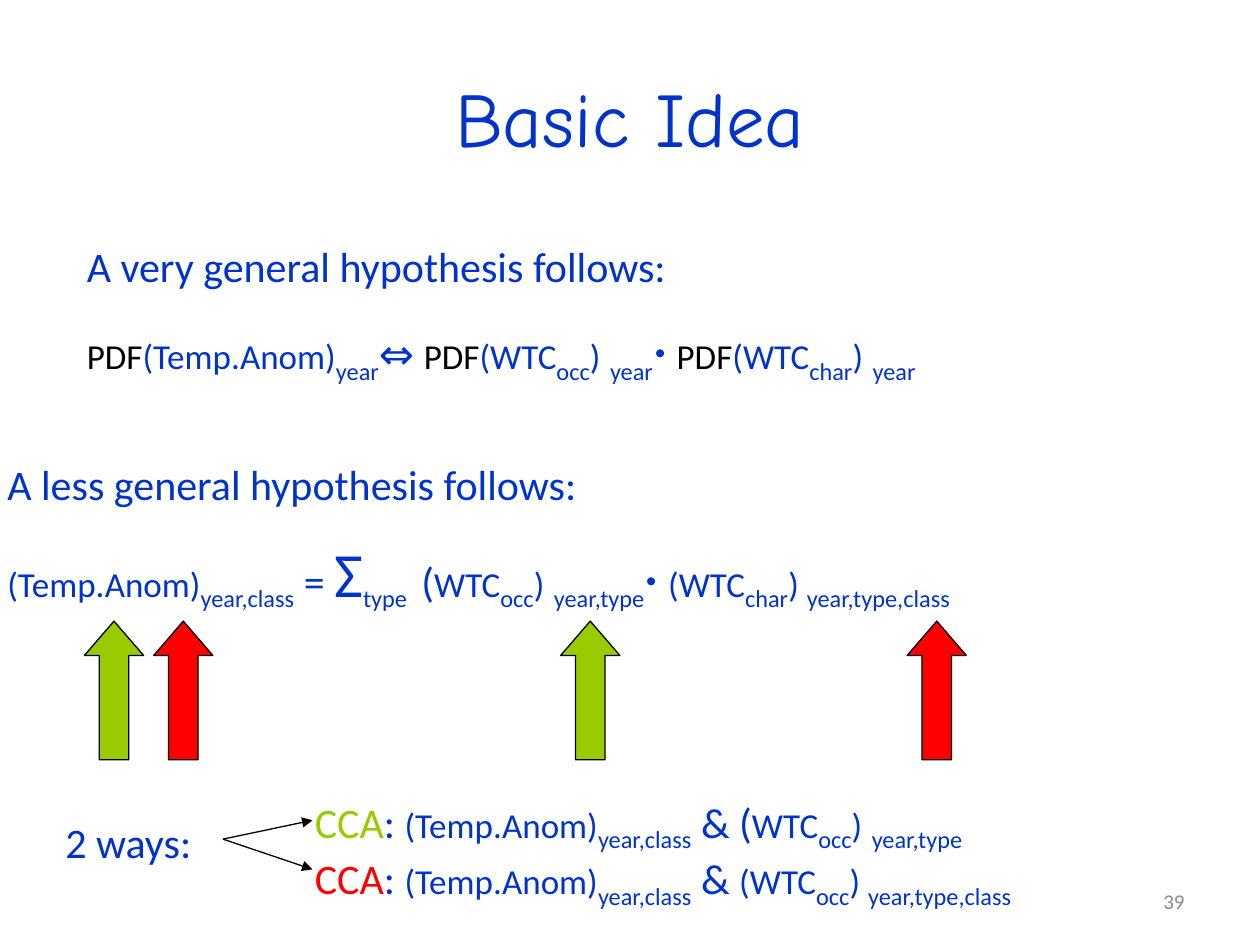
from dataclasses import dataclass

from lxml import etree
from pptx import Presentation
from pptx.dml.color import RGBColor
from pptx.enum.shapes import MSO_CONNECTOR, MSO_SHAPE
from pptx.enum.text import MSO_ANCHOR, PP_ALIGN
from pptx.oxml.ns import qn
from pptx.util import Inches, Pt

UP_ARROW = MSO_SHAPE.UP_ARROW
STRAIGHT = MSO_CONNECTOR.STRAIGHT
TOP, MIDDLE = MSO_ANCHOR.TOP, MSO_ANCHOR.MIDDLE
LEFT, CENTER, RIGHT = PP_ALIGN.LEFT, PP_ALIGN.CENTER, PP_ALIGN.RIGHT


@dataclass(frozen=True)
class Theme:
    body_font: str = "Calibri"
    title_font: str = "Comic Neue"
    blue: RGBColor = RGBColor(0x00, 0x33, 0xCC)
    black: RGBColor = RGBColor(0x00, 0x00, 0x00)
    green: RGBColor = RGBColor(0x99, 0xCC, 0x00)
    red: RGBColor = RGBColor(0xFF, 0x00, 0x00)
    gray: RGBColor = RGBColor(0x8C, 0x8C, 0x8C)
    title: int = 44
    sigma: int = 36
    dot: int = 32
    body: int = 24
    term: int = 20
    number: int = 12
    outline: float = 0.75


THEME = Theme()


def piece(text, size=THEME.body, color=THEME.blue, font=THEME.body_font, sub=False):
    return text, {"name": font, "size": Pt(size)}, color, sub


def term(text):
    return piece(text, THEME.term)


def sub(text):
    return piece(text, sub=True)


PDF = piece("PDF", THEME.term, THEME.black)
SPACE = piece(" ")
DOT = piece("·", THEME.dot)
ANOMALY = term("(Temp.Anom)")
ANOMALY_BY_CLASS = [ANOMALY, sub("year,class")]
OCCURRENCE = [term("(WTC"), sub("occ"), term(")")]
OPEN_OCCURRENCE = [piece("("), term("WTC"), sub("occ"), term(")")]
CHARACTER = [term("(WTC"), sub("char"), term(")")]

GENERAL_FORMULA = [
    PDF, ANOMALY, sub("year"), piece("⇔ "),
    PDF, *OCCURRENCE, SPACE, sub("year"), DOT, SPACE,
    PDF, *CHARACTER, SPACE, sub("year"),
]
CLASS_FORMULA = [
    *ANOMALY_BY_CLASS, piece(" = "), piece("Σ", THEME.sigma), sub("type"),
    piece(" ", THEME.sigma), *OPEN_OCCURRENCE, SPACE, sub("year,type"), DOT, SPACE,
    *CHARACTER, term(" "), sub("year,type,class"),
]


def add_text(slide, box, paragraphs, align=LEFT, anchor=TOP, gap=0):
    frame = slide.shapes.add_textbox(*map(Inches, box)).text_frame
    frame.word_wrap = True
    frame.vertical_anchor = anchor
    for index, pieces in enumerate(paragraphs):
        paragraph = frame.add_paragraph() if index else frame.paragraphs[0]
        paragraph.alignment = align
        if index:
            paragraph.space_before = Pt(gap)
        for text, formats, color, lowered in pieces:
            run = paragraph.add_run()
            run.text = text
            for attribute, value in formats.items():
                setattr(run.font, attribute, value)
            run.font.color.rgb = color
            if lowered:
                run._r.get_or_add_rPr().set("baseline", "-25000")


def add_up_arrow(slide, left, color):
    arrow = slide.shapes.add_shape(
        UP_ARROW, Inches(left), Inches(4.93), Inches(0.47), Inches(1.1)
    )
    arrow.adjustments[0] = 0.5
    arrow.adjustments[1] = 0.58
    arrow.shadow.inherit = False
    arrow.fill.solid()
    arrow.fill.fore_color.rgb = color
    arrow.line.color.rgb = THEME.black
    arrow.line.width = Pt(THEME.outline)


def add_pointer(slide, start, end):
    pointer = slide.shapes.add_connector(STRAIGHT, *map(Inches, (*start, *end)))
    pointer.line.color.rgb = THEME.black
    pointer.line.width = Pt(THEME.outline)
    etree.SubElement(pointer.line._get_or_add_ln(), qn("a:tailEnd"), type="triangle")
    etree.SubElement(pointer._element.spPr, qn("a:effectLst"))


def add_way(slide, color, arrow_lefts, top, tip, relation):
    for left in arrow_lefts:
        add_up_arrow(slide, left, color)
    label = [piece("CCA", color=color), piece(": ")]
    add_text(slide, (2.4, top, 7, 0.5), [label + ANOMALY_BY_CLASS + relation])
    add_pointer(slide, (1.77, 6.66), (2.48, tip))


def main():
    deck = Presentation()
    deck.slide_width, deck.slide_height = Inches(10), Inches(7.5)
    slide = deck.slides.add_slide(deck.slide_layouts[6])

    title = piece("Basic Idea", THEME.title, font=THEME.title_font)
    add_text(slide, (0.5, 0.3, 9, 1.25), [[title]], CENTER, MIDDLE)
    add_text(
        slide, (0.59, 1.86, 8.78, 1.25),
        [[piece("A very general hypothesis follows:")], GENERAL_FORMULA], gap=13,
    )
    add_text(
        slide, (-0.04, 3.59, 10.04, 1.34),
        [[piece("A less general hypothesis follows:")], CLASS_FORMULA], gap=14.4,
    )
    add_text(slide, (0.42, 6.43, 1.43, 0.5), [[piece("2 ways:")]])
    add_way(
        slide, THEME.green, (0.67, 4.45), 6.27, 6.51,
        [piece(" & "), *OPEN_OCCURRENCE, SPACE, sub("year,type")],
    )
    add_way(
        slide, THEME.red, (1.22, 7.2), 6.72, 6.9,
        [piece(" & "), *OCCURRENCE, term(" "), sub("year,type,class")],
    )
    page = piece("39", THEME.number, THEME.gray)
    add_text(slide, (7.17, 6.95, 2.33, 0.4), [[page]], RIGHT, MIDDLE)

    deck.save("out.pptx")


if __name__ == "__main__":
    main()
